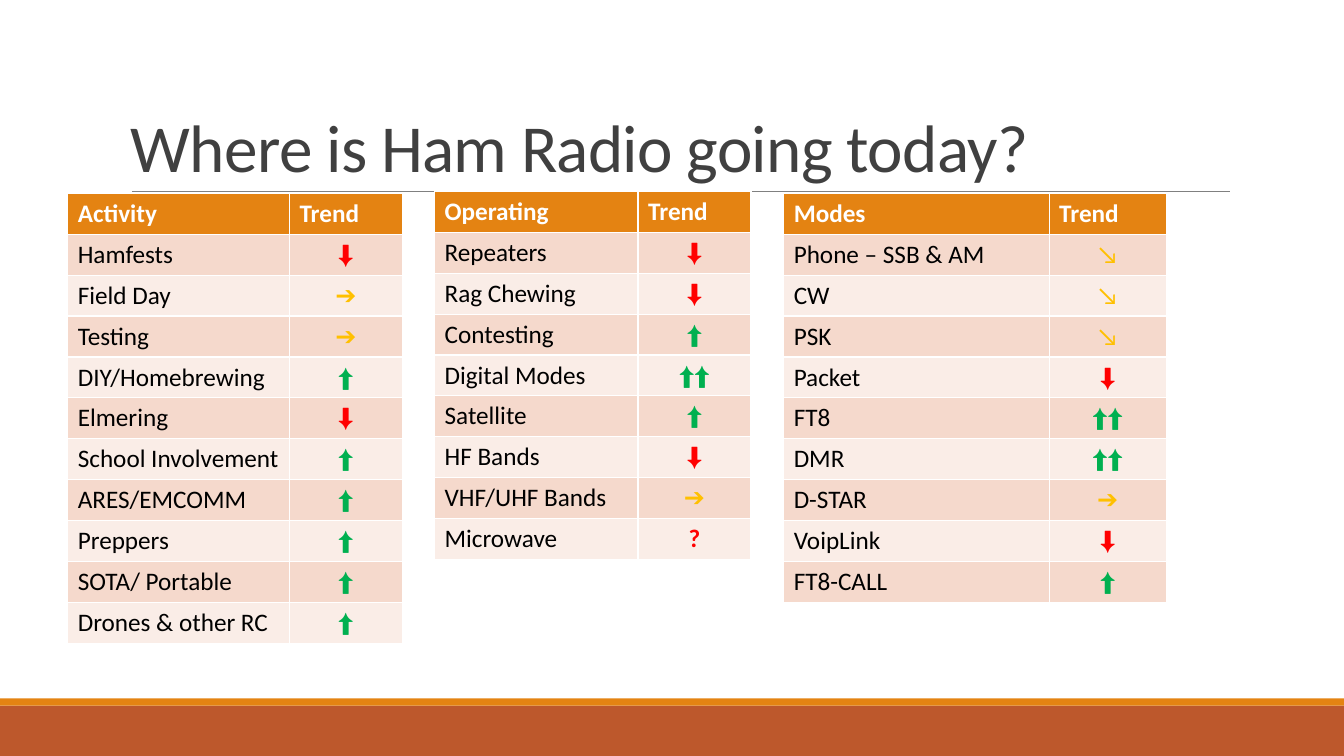
"""Build the slide on ham radio trends with its three tables."""
from lxml.etree import SubElement
from pptx import Presentation
from pptx.dml.color import RGBColor as RGB
from pptx.enum.shapes import MSO_CONNECTOR as LINK, MSO_SHAPE as SHAPE
from pptx.enum.text import MSO_ANCHOR as ANCHOR, PP_ALIGN as ALIGN
from pptx.oxml.ns import qn
from pptx.util import Pt

WHITE = RGB(0xFF, 0xFF, 0xFF)
BLACK = RGB(0x00, 0x00, 0x00)
DARK = RGB(0x40, 0x40, 0x40)
GRAY = RGB(0x80, 0x80, 0x80)
RUST = RGB(0xBD, 0x58, 0x2C)
ORANGE = RGB(0xE4, 0x83, 0x12)
BANDS = [RGB(0xFA, 0xED, 0xE7), RGB(0xF5, 0xD9, 0xCC)]
RED = RGB(0xFF, 0x00, 0x00)
AMBER = RGB(0xFF, 0xC0, 0x00)
GREEN = RGB(0x00, 0xB0, 0x50)
TINTS = {"⬇": RED, "?": RED, "➔": AMBER, "↘": AMBER, "⬆": GREEN, "⬆⬆": GREEN}
ROW = 29.2

TABLES = [
    (48.4, 138.2, 158.4, 80.6, "Activity", [
        ("Hamfests", "⬇"), ("Field Day", "➔"), ("Testing", "➔"),
        ("DIY/Homebrewing", "⬆"), ("Elmering", "⬇"),
        ("School Involvement", "⬆"), ("ARES/EMCOMM", "⬆"),
        ("Preppers", "⬆"), ("SOTA/ Portable", "⬆"),
        ("Drones & other RC", "⬆")]),
    (310.4, 136.8, 145.4, 80.6, "Operating", [
        ("Repeaters", "⬇"), ("Rag Chewing", "⬇"), ("Contesting", "⬆"),
        ("Digital Modes", "⬆⬆"), ("Satellite", "⬆"), ("HF Bands", "⬇"),
        ("VHF/UHF Bands", "➔"), ("Microwave", "?")]),
    (559.8, 138.2, 189.6, 83.8, "Modes", [
        ("Phone – SSB & AM", "↘"), ("CW", "↘"), ("PSK", "↘"),
        ("Packet", "⬇"), ("FT8", "⬆⬆"), ("DMR", "⬆⬆"), ("D-STAR", "➔"),
        ("VoipLink", "⬇"), ("FT8-CALL", "⬆")]),
]


def style(para, size, color, bold=False):
    font = para.runs[0].font
    font.name = "Calibri"
    font.size = Pt(size)
    font.bold = bold
    font.color.rgb = color
    return font


deck = Presentation()
deck.slide_width, deck.slide_height = Pt(960), Pt(540)
slide = deck.slides.add_slide(deck.slide_layouts[6])
shapes = slide.shapes

for top, high, color in [(504, 36, RUST), (498.8, 5.2, ORANGE)]:
    bar = shapes.add_shape(SHAPE.RECTANGLE, Pt(0), Pt(top), Pt(960), Pt(high))
    bar.shadow.inherit = False
    bar.fill.solid()
    bar.fill.fore_color.rgb = color
    bar.line.fill.background()

rule = shapes.add_connector(LINK.STRAIGHT, Pt(94.2), Pt(136.8), Pt(878.6), Pt(136.8))
rule.line.color.rgb = GRAY
rule.line.width = Pt(0.5)
SubElement(rule.element.spPr, qn("a:effectLst"))

title = shapes.add_textbox(Pt(86.4), Pt(22.6), Pt(792), Pt(114.2))
frame = title.text_frame
frame.word_wrap = True
frame.vertical_anchor = ANCHOR.BOTTOM
frame.text = "Where is Ham Radio going today?"
head = frame.paragraphs[0]
head.line_spacing = 0.85
style(head, 48, DARK)
head.runs[0].font._element.set("spc", "-50")

for left, top, wide, slim, name, items in TABLES:
    rows = [(name, "Trend")] + items
    grid = shapes.add_table(len(rows), 2, Pt(left), Pt(top),
                            Pt(wide + slim), Pt(ROW * len(rows))).table
    grid.columns[0].width = Pt(wide)
    grid.columns[1].width = Pt(slim)
    for r, row in enumerate(rows):
        grid.rows[r].height = Pt(ROW)
        for c, text in enumerate(row):
            cell = grid.cell(r, c)
            cell.fill.solid()
            cell.fill.fore_color.rgb = BANDS[r % 2] if r else ORANGE
            cell.text_frame.text = text
            para = cell.text_frame.paragraphs[0]
            color = TINTS.get(text, BLACK) if r else WHITE
            style(para, 18, color, r == 0 or text == "?")
            if r and c:
                para.alignment = ALIGN.CENTER

deck.save("out.pptx")
